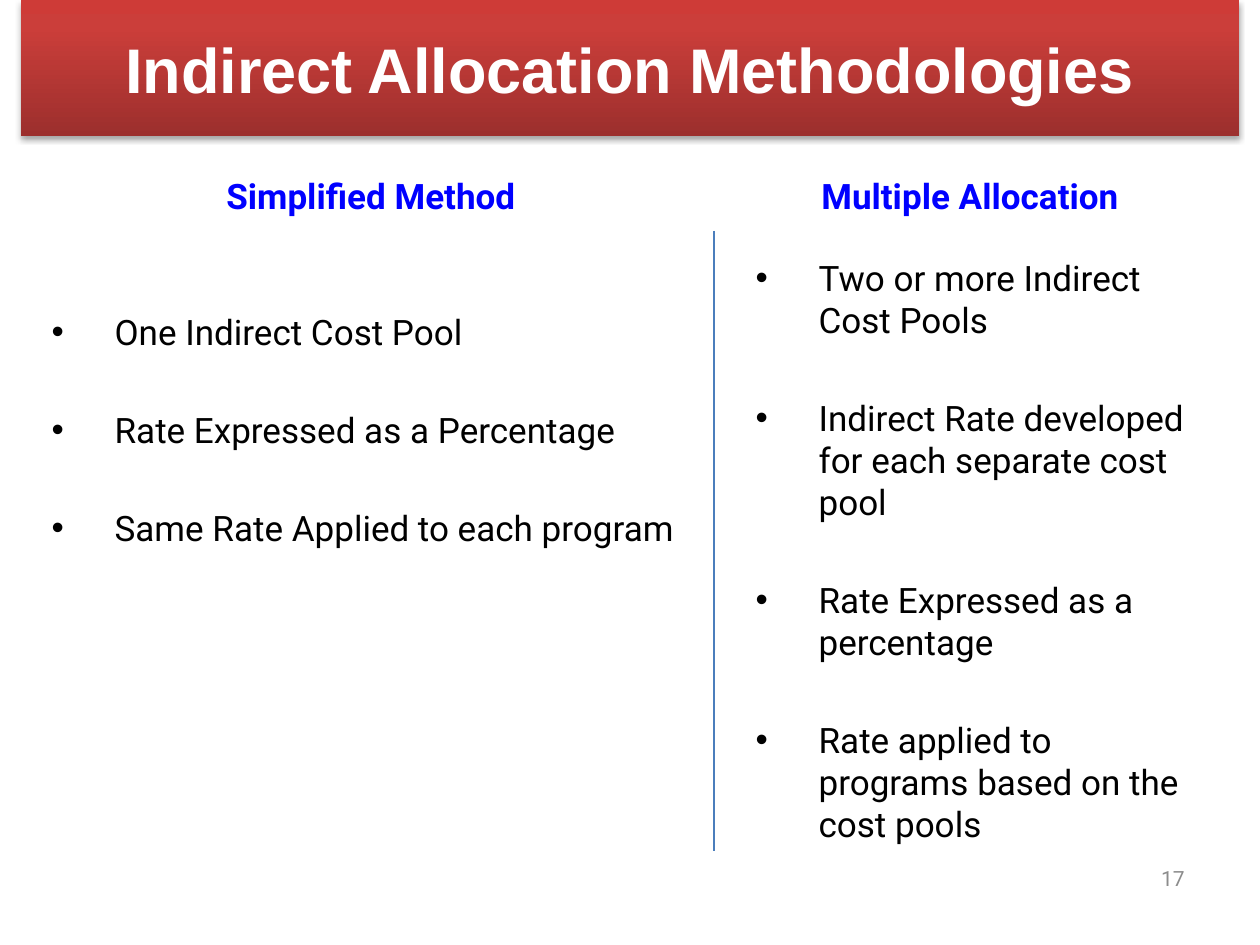
from lxml import etree
from pptx import Presentation
from pptx.dml.color import RGBColor
from pptx.enum import shapes, text
from pptx.oxml import parse_xml
from pptx.oxml.ns import nsdecls, qn
from pptx.util import Emu, Pt

EMU_PER_PX = 914400 / 126
COLORS = {
    "banner_dark": "9C2F2D",
    "banner_mid": "CB3E3A",
    "banner_light": "CE3B37",
    "shadow": "000000",
    "title": "FFFFFF",
    "heading": "0000FF",
    "body": "000000",
    "divider": "4B7EBC",
    "number": "8C8C8C",
}
TITLE = {"name": "Arial", "size": Pt(36), "bold": True}
HEADING = {"name": "Roboto", "size": Pt(20), "bold": True}
BODY = {"name": "Roboto", "size": Pt(20), "bold": False}
NUMBER = {"name": "Roboto", "size": Pt(12), "bold": False}
SIMPLIFIED = [
    "One Indirect Cost Pool",
    "Rate Expressed as a Percentage",
    "Same Rate Applied to each program",
]
MULTIPLE = [
    "Two or more Indirect Cost Pools",
    "Indirect Rate developed for each separate cost pool",
    "Rate Expressed as a percentage",
    "Rate applied to programs based on the cost pools",
]


def px(length):
    return Emu(round(length * EMU_PER_PX))


def set_all(target, values):
    for name, value in values.items():
        setattr(target, name, value)


def place(shape, left, top, width, height):
    set_all(shape, {"left": px(left), "top": px(top), "width": px(width), "height": px(height)})


def write(paragraph, words, font, color, align):
    paragraph.alignment = align
    run = paragraph.add_run()
    run.text = words
    set_all(run.font, font)
    run.font.color.rgb = RGBColor.from_string(COLORS[color])


def set_bullet(paragraph, margin, indent, mark=None):
    properties = paragraph._p.get_or_add_pPr()
    properties.set("marL", str(px(margin)))
    properties.set("indent", str(px(indent)))
    if mark:
        etree.SubElement(properties, qn("a:buFont"), typeface="Arial")
        etree.SubElement(properties, qn("a:buChar"), char=mark)
    else:
        etree.SubElement(properties, qn("a:buNone"))


def add_banner(title, words):
    place(title, 21, 0, 1218, 136)
    stops = ((0, "banner_dark"), (80000, "banner_mid"), (100000, "banner_light"))
    stop_xml = "".join(
        f'<a:gs pos="{position}"><a:srgbClr val="{COLORS[color]}"/></a:gs>'
        for position, color in stops
    )
    gradient = (
        f'<a:gradFill {nsdecls("a")} rotWithShape="1"><a:gsLst>{stop_xml}</a:gsLst>'
        '<a:lin ang="16200000" scaled="0"/></a:gradFill>'
    )
    shadow = (
        f'<a:effectLst {nsdecls("a")}><a:outerShdw blurRad="40000" dist="23000" dir="5400000" '
        f'rotWithShape="0"><a:srgbClr val="{COLORS["shadow"]}"><a:alpha val="35000"/>'
        "</a:srgbClr></a:outerShdw></a:effectLst>"
    )
    for xml in (gradient, shadow):
        title._element.spPr.append(parse_xml(xml))
    frame = title.text_frame
    set_all(frame, {"vertical_anchor": text.MSO_ANCHOR.MIDDLE, "auto_size": text.MSO_AUTO_SIZE.NONE})
    write(frame.paragraphs[0], words, TITLE, "title", text.PP_ALIGN.CENTER)


def add_method(body, box, heading, points, first_gap):
    place(body, *box)
    frame = body.text_frame
    set_all(frame, {"word_wrap": True, "auto_size": text.MSO_AUTO_SIZE.NONE})
    top = frame.paragraphs[0]
    top.space_before = Pt(0)
    set_bullet(top, 8, 0)
    write(top, heading, HEADING, "heading", text.PP_ALIGN.CENTER)
    for index, point in enumerate(points):
        paragraph = frame.add_paragraph()
        paragraph.space_before = Pt(32 if index else first_gap)
        set_bullet(paragraph, 71, -63, "•")
        write(paragraph, point, BODY, "body", text.PP_ALIGN.LEFT)


def add_divider(slide, x, top, bottom):
    divider = slide.shapes.add_connector(
        shapes.MSO_CONNECTOR.STRAIGHT, px(x), px(top), px(x), px(bottom)
    )
    divider.line.color.rgb = RGBColor.from_string(COLORS["divider"])
    divider.line.width = Pt(0.75)
    etree.SubElement(divider._element.spPr, qn("a:effectLst"))


def add_page_number(slide, number):
    frame = slide.shapes.add_textbox(px(903), px(840), px(294), px(76)).text_frame
    set_all(frame, {"word_wrap": True, "vertical_anchor": text.MSO_ANCHOR.MIDDLE})
    write(frame.paragraphs[0], number, NUMBER, "number", text.PP_ALIGN.RIGHT)


def main():
    deck = Presentation()
    set_all(deck, {"slide_width": px(1260), "slide_height": px(945)})
    slide = deck.slides.add_slide(deck.slide_layouts.get_by_name("Two Content"))
    title, simplified, multiple = slide.placeholders
    add_banner(title, "Indirect Allocation Methodologies")
    add_method(simplified, (31, 168, 672, 577), "Simplified Method", SIMPLIFIED, 54)
    add_method(multiple, (735, 168, 462, 546), "Multiple Allocation", MULTIPLE, 23)
    add_divider(slide, 714, 231, 851)
    add_page_number(slide, "17")
    deck.save("out.pptx")


if __name__ == "__main__":
    main()
